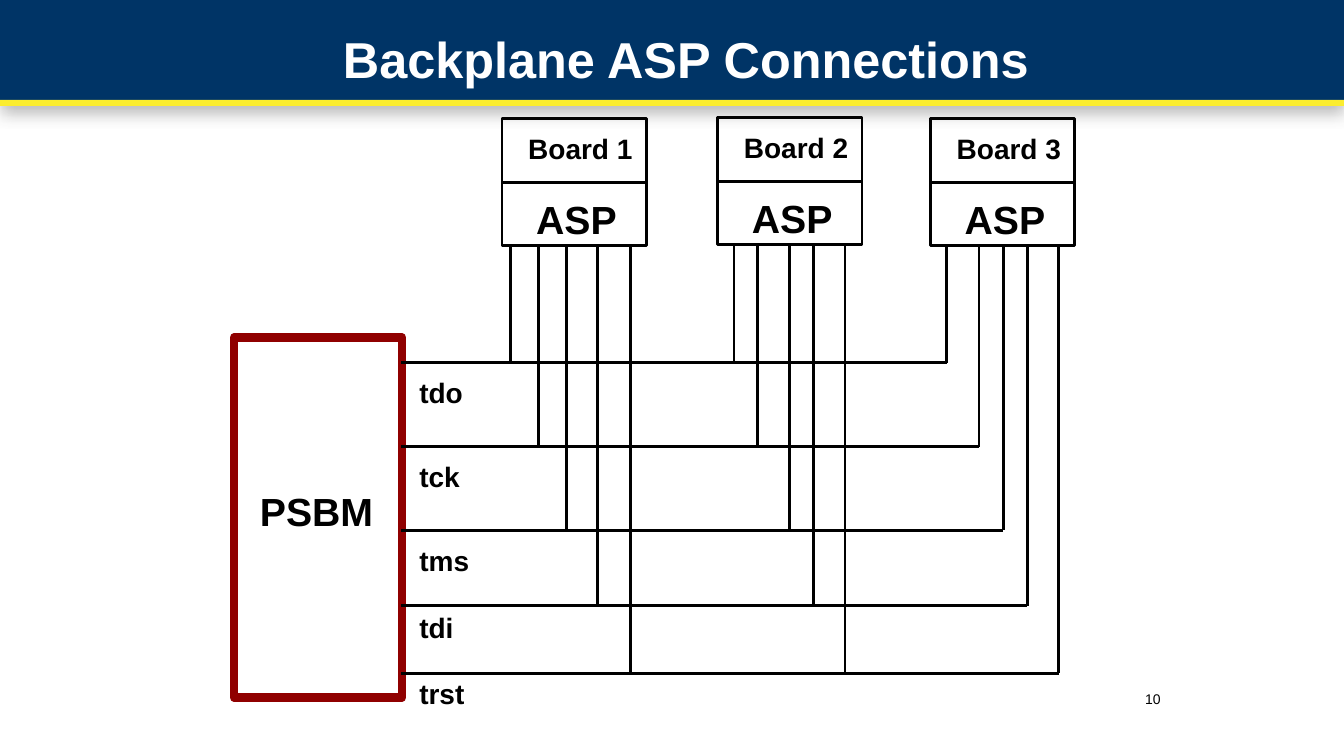
import pptx
import pptx.util
import pptx.dml.color
import pptx.enum.shapes
import pptx.enum.text
import pptx.oxml
import pptx.oxml.ns
from pptx.util import Inches

SLIDE_WIDTH = 13.33
BUS_LEFT = 3.98
BOX_HEIGHT = 0.63

# Bus signals: name, height of the bus line, right end, top of the label
SIGNALS = [
    ("tdo", 3.6, 9.39, 3.68),
    ("tck", 4.43, 9.71, 4.51),
    ("tms", 5.26, 9.95, 5.34),
    ("tdi", 6.01, 10.19, 6.01),
    ("trst", 6.68, 10.5, 6.66),
]

# Boards: name, left, top, x of the drop line for each signal
BOARDS = [
    ("Board 1", 4.98, 1.18, (5.06, 5.34, 5.62, 5.93, 6.25)),
    ("Board 2", 7.12, 1.17, (7.28, 7.51, 7.83, 8.07, 8.38)),
    ("Board 3", 9.23, 1.18, (9.39, 9.71, 9.95, 10.19, 10.5)),
]


def color(value):
    return pptx.dml.color.RGBColor.from_string(value)


def add_box(page, left, top, width, height, fill=None, line=None, weight=2):
    box = page.shapes.add_shape(
        pptx.enum.shapes.MSO_SHAPE.RECTANGLE,
        Inches(left), Inches(top), Inches(width), Inches(height))
    box.shadow.inherit = False
    if fill:
        box.fill.solid()
        box.fill.fore_color.rgb = color(fill)
    else:
        box.fill.background()
    if line:
        box.line.color.rgb = color(line)
        box.line.width = pptx.util.Pt(weight)
    else:
        box.line.fill.background()
    return box


def add_text(page, text, left, top, width, height, size=20, bold=True,
             ink="000000", align="LEFT", anchor="TOP", before=0):
    box = page.shapes.add_textbox(
        Inches(left), Inches(top), Inches(width), Inches(height))
    frame = box.text_frame
    frame.word_wrap = True
    frame.vertical_anchor = getattr(pptx.enum.text.MSO_ANCHOR, anchor)
    para = frame.paragraphs[0]
    para.alignment = getattr(pptx.enum.text.PP_ALIGN, align)
    para.space_before = pptx.util.Pt(before)
    span = para.add_run()
    span.text = text
    span.font.name = "Arial"
    span.font.size = pptx.util.Pt(size)
    span.font.bold = bold
    span.font.color.rgb = color(ink)


def add_wire(page, x1, y1, x2, y2):
    wire = page.shapes.add_connector(
        pptx.enum.shapes.MSO_CONNECTOR.STRAIGHT,
        Inches(x1), Inches(y1), Inches(x2), Inches(y2))
    wire.line.color.rgb = color("000000")
    wire.line.width = pptx.util.Pt(2)
    wire._element.spPr.append(pptx.oxml.parse_xml(
        f"<a:effectLst {pptx.oxml.ns.nsdecls('a')}/>"))


def add_drop_shadow(box):
    effects = box._element.spPr.find(pptx.oxml.ns.qn("a:effectLst"))
    effects.append(pptx.oxml.parse_xml(
        f'<a:outerShdw {pptx.oxml.ns.nsdecls("a")} blurRad="{pptx.util.Pt(12)}" '
        f'dist="{pptx.util.Pt(8)}" dir="5400000" algn="t" rotWithShape="0">'
        '<a:srgbClr val="A6A6A6"><a:alpha val="78000"/></a:srgbClr></a:outerShdw>'))


def add_header(page):
    band = add_box(page, 0, 0, SLIDE_WIDTH, 1, fill="003466")
    add_drop_shadow(band)
    add_box(page, 0, 0.99, SLIDE_WIDTH, 0.06, fill="FBED30")
    add_text(page, "Backplane ASP Connections", 0.28, 0.11, 13.05, 0.94,
             size=36, ink="FFFFFF", align="CENTER", anchor="MIDDLE")


def add_board(page, name, left, top, drops):
    for row in range(2):
        add_box(page, left, top + row * BOX_HEIGHT, 1.43, BOX_HEIGHT,
                line="000000")
    add_text(page, name, left + 0.16, top + 0.08, 1.4, 0.43, before=10)
    add_text(page, "ASP", left + 0.24, top + 0.71, 1.03, 0.57, size=28, before=14)
    bottom = top + 2 * BOX_HEIGHT
    for x, (_, bus_y, _, _) in zip(drops, SIGNALS):
        add_wire(page, x, bottom, x, bus_y)


def main():
    deck = pptx.Presentation()
    deck.slide_width = Inches(SLIDE_WIDTH)
    deck.slide_height = Inches(7.5)
    page = deck.slides.add_slide(deck.slide_layouts[6])

    # Header and page number
    add_header(page)
    add_text(page, "10", 9.28, 6.8, 2.33, 0.52, size=10, bold=False, align="RIGHT")

    # Bus master
    add_box(page, 2.32, 3.35, 1.67, 3.57, line="900000", weight=6)
    add_text(page, "PSBM", 2.48, 4.79, 1.33, 0.57, size=28, before=14)

    # Boards with their drop lines
    for board in BOARDS:
        add_board(page, *board)

    # Bus lines with their labels
    for name, bus_y, right, label_top in SIGNALS:
        add_wire(page, BUS_LEFT, bus_y, right, bus_y)
        add_text(page, name, 4.06, label_top, 0.71, 0.43, before=10)

    deck.save("out.pptx")


if __name__ == "__main__":
    main()
